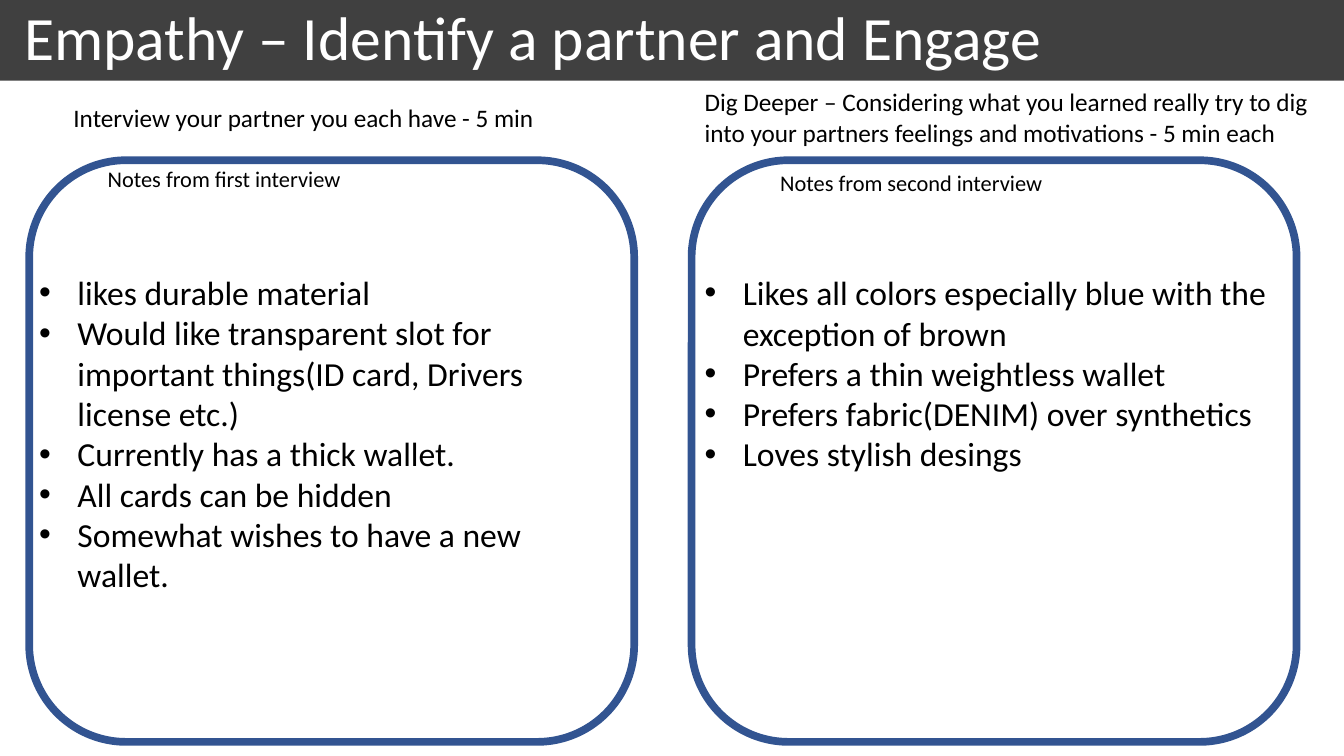
import dataclasses

import pptx
import pptx.dml.color
import pptx.enum.shapes
import pptx.enum.text
import pptx.util
from lxml import etree
from pptx.oxml.ns import qn
from pptx.util import Inches


@dataclasses.dataclass(frozen=True)
class Theme:
    font: str = "Calibri"
    bar: str = "404040"
    border: str = "325491"
    title_text: str = "FFFFFF"
    text: str = "000000"
    title_size: int = 44
    body_size: int = 24
    prompt_size: int = 18
    label_size: int = 16
    border_width: float = 5.5


THEME = Theme()
BULLET_INDENT = 0.38
PANEL_TOP, PANEL_WIDTH, PANEL_HEIGHT = 1.59, 6, 5.77
NOTES_TOP = 2.65

# Boxes are (left, top, width, height) in inches.
INTERVIEWS = [
    {
        "panel_left": 0.29,
        "prompt": "Interview your partner you each have - 5 min",
        "prompt_box": (0.63, 0.97, 5.81, 0.4),
        "label": "Notes from first interview",
        "label_box": (0.97, 1.59, 3.38, 0.37),
        "notes": [
            "likes durable material",
            "Would like transparent slot for important things(ID card, Drivers license etc.)",
            "Currently has a thick wallet.",
            "All cards can be hidden",
            "Somewhat wishes to have a new wallet.",
        ],
        "notes_box": (0.29, NOTES_TOP, 5.87, 3.33),
    },
    {
        "panel_left": 6.86,
        "prompt": "Dig Deeper – Considering what you learned really try to dig "
                  "into your partners feelings and motivations - 5 min each",
        "prompt_box": (6.89, 0.81, 6.28, 0.71),
        "label": "Notes from second interview",
        "label_box": (7.64, 1.63, 3.38, 0.37),
        "notes": [
            "Likes all colors especially blue with the exception of brown",
            "Prefers a thin weightless wallet",
            "Prefers fabric(DENIM) over synthetics",
            "Loves stylish desings",
        ],
        "notes_box": (6.89, NOTES_TOP, 5.96, 2.12),
    },
]


def color(value):
    return pptx.dml.color.RGBColor.from_string(value)


def format_font(paragraph, size, text_color):
    for run in paragraph.runs:
        run.font.name = THEME.font
        run.font.size = pptx.util.Pt(size)
        run.font.color.rgb = color(text_color)


def add_bullet(paragraph):
    properties = paragraph._p.get_or_add_pPr()
    properties.set("marL", str(Inches(BULLET_INDENT)))
    properties.set("indent", str(-Inches(BULLET_INDENT)))
    etree.SubElement(properties, qn("a:buFont"), typeface="Arial")
    etree.SubElement(properties, qn("a:buChar"), char="•")


def add_text(slide, box, lines, size, bulleted=False):
    text_box = slide.shapes.add_textbox(*map(Inches, box))
    text_frame = text_box.text_frame
    text_frame.word_wrap = True
    text_frame.text = "\n".join(lines)
    for paragraph in text_frame.paragraphs:
        if bulleted:
            add_bullet(paragraph)
        format_font(paragraph, size, THEME.text)


def add_title_bar(slide, title, width):
    bar = slide.shapes.add_shape(
        pptx.enum.shapes.MSO_SHAPE.RECTANGLE, 0, 0, width, Inches(0.8))
    bar.shadow.inherit = False
    bar.fill.solid()
    bar.fill.fore_color.rgb = color(THEME.bar)
    bar.line.fill.background()
    text_frame = bar.text_frame
    text_frame.margin_left = Inches(0.24)
    text_frame.word_wrap = True
    text_frame.vertical_anchor = pptx.enum.text.MSO_ANCHOR.MIDDLE
    text_frame.text = title
    paragraph = text_frame.paragraphs[0]
    paragraph.alignment = pptx.enum.text.PP_ALIGN.LEFT
    paragraph.line_spacing = 0.9
    format_font(paragraph, THEME.title_size, THEME.title_text)


def add_panel(slide, left):
    panel = slide.shapes.add_shape(
        pptx.enum.shapes.MSO_SHAPE.ROUNDED_RECTANGLE,
        Inches(left), Inches(PANEL_TOP), Inches(PANEL_WIDTH), Inches(PANEL_HEIGHT))
    panel.shadow.inherit = False
    panel.fill.background()
    panel.line.color.rgb = color(THEME.border)
    panel.line.width = pptx.util.Pt(THEME.border_width)


def add_interview(slide, interview):
    add_panel(slide, interview["panel_left"])
    add_text(slide, interview["prompt_box"], [interview["prompt"]], THEME.prompt_size)
    add_text(slide, interview["label_box"], [interview["label"]], THEME.label_size)
    add_text(slide, interview["notes_box"], interview["notes"], THEME.body_size, bulleted=True)


def main():
    presentation = pptx.Presentation()
    presentation.slide_width = Inches(13.33)
    presentation.slide_height = Inches(7.5)
    slide = presentation.slides.add_slide(presentation.slide_layouts[6])
    add_title_bar(slide, "Empathy – Identify a partner and Engage", presentation.slide_width)
    for interview in INTERVIEWS:
        add_interview(slide, interview)
    presentation.save("out.pptx")


if __name__ == "__main__":
    main()
